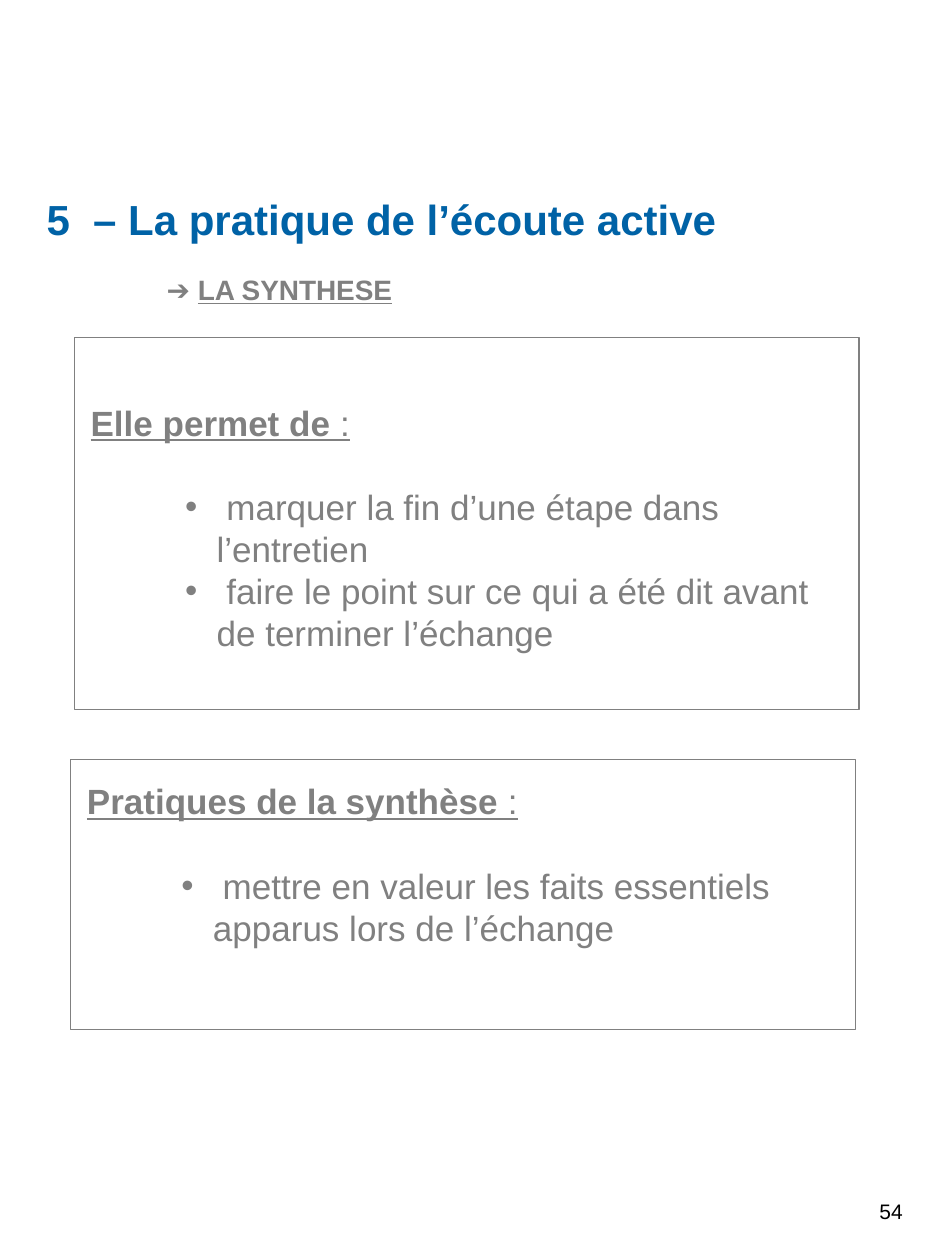
from dataclasses import dataclass

import lxml.etree
import pptx
import pptx.dml.color
import pptx.enum.shapes
import pptx.enum.text
import pptx.oxml.ns
import pptx.util

Pt = pptx.util.Pt
BLUE = pptx.dml.color.RGBColor(0x00, 0x62, 0xA6)
GREY = pptx.dml.color.RGBColor(0x80, 0x80, 0x80)
BLACK = pptx.dml.color.RGBColor(0x00, 0x00, 0x00)
LINE_RATIO = 1.2
BODY_SIZE = 20


@dataclass(frozen=True)
class Area:
    left: float
    top: float
    width: float
    height: float


@dataclass(frozen=True)
class Span:
    text: str
    size: float = BODY_SIZE
    color: pptx.dml.color.RGBColor = GREY
    bold: bool = False
    underline: bool = False


@dataclass(frozen=True)
class Panel:
    frame: Area
    body: Area
    heading: str
    colon: str
    points: tuple[str, ...]


PANELS = (
    Panel(
        Area(42.5, 193, 448.5, 212.5),
        Area(44.6, 225.6, 442.8, 151),
        "Elle permet de ",
        ":",
        (
            " marquer la fin d’une étape dans l’entretien",
            " faire le point sur ce qui a été dit avant de terminer l’échange",
        ),
    ),
    Panel(
        Area(40.3, 434, 448.5, 154.5),
        Area(42.5, 442.1, 442.8, 122.4),
        "Pratiques de la synthèse",
        " :",
        (" mettre en valeur les faits essentiels apparus lors de l’échange",),
    ),
)


def place(shape, area: Area) -> None:
    shape.left, shape.top = Pt(area.left), Pt(area.top)
    shape.width, shape.height = Pt(area.width), Pt(area.height)


def prepare(frame) -> None:
    frame.word_wrap = True
    frame.auto_size = pptx.enum.text.MSO_AUTO_SIZE.NONE
    frame.vertical_anchor = pptx.enum.text.MSO_ANCHOR.TOP


def write(para, spans: tuple[Span, ...], after: float = 0) -> None:
    para.alignment = pptx.enum.text.PP_ALIGN.LEFT
    para.line_spacing = Pt(spans[0].size * LINE_RATIO)
    para.space_before = Pt(0)
    para.space_after = Pt(after)
    for span in spans:
        run = para.add_run()
        run.text = span.text
        run.font.name = "Arial"
        run.font.size = Pt(span.size)
        run.font.color.rgb = span.color
        run.font.bold = span.bold
        run.font.underline = span.underline


def set_bullet(para, char: str = "", margin: float = 0, indent: float = 0) -> None:
    properties = para._p.get_or_add_pPr()
    properties.set("marL", str(Pt(margin)))
    properties.set("indent", str(Pt(indent)))
    tag = "a:buChar" if char else "a:buNone"
    bullet = lxml.etree.SubElement(properties, pptx.oxml.ns.qn(tag))
    if char:
        bullet.set("char", char)


def add_label(page, area: Area, *spans: Span) -> None:
    box = page.shapes.add_textbox(0, 0, 0, 0)
    place(box, area)
    prepare(box.text_frame)
    write(box.text_frame.paragraphs[0], spans)


def add_panel(page, body, panel: Panel) -> None:
    border = page.shapes.add_shape(pptx.enum.shapes.MSO_SHAPE.RECTANGLE, 0, 0, 0, 0)
    place(border, panel.frame)
    border.shadow.inherit = False
    border.fill.background()
    border.line.color.rgb = GREY
    border.line.width = Pt(0.75)

    place(body, panel.body)
    prepare(body.text_frame)
    heading = body.text_frame.paragraphs[0]
    spans = (
        Span(panel.heading, bold=True, underline=True),
        Span(panel.colon, underline=True),
    )
    write(heading, spans, after=BODY_SIZE * LINE_RATIO)
    set_bullet(heading)
    for point in panel.points:
        para = body.text_frame.add_paragraph()
        para.level = 1
        write(para, (Span(point),))
        set_bullet(para, "•", margin=72, indent=-18)


def main() -> None:
    deck = pptx.Presentation()
    deck.slide_width, deck.slide_height = Pt(540), Pt(720)
    page = deck.slides.add_slide(deck.slide_layouts.get_by_name("Two Content"))
    title, *bodies = page.placeholders

    place(title, Area(19.4, 106.8, 504, 36))
    prepare(title.text_frame)
    heading = Span("5  – La pratique de l’écoute active", 24, BLUE, bold=True)
    write(title.text_frame.paragraphs[0], (heading,))

    add_label(
        page,
        Area(88.2, 152.2, 413, 26.6),
        Span("➔ ", 16, bold=True),
        Span("LA SYNTHESE", 16, bold=True, underline=True),
    )
    for body, panel in zip(bodies, PANELS):
        add_panel(page, body, panel)
    add_label(page, Area(495.4, 681.1, 44.6, 38.9), Span("54", 12, BLACK))

    deck.save("out.pptx")


if __name__ == "__main__":
    main()
